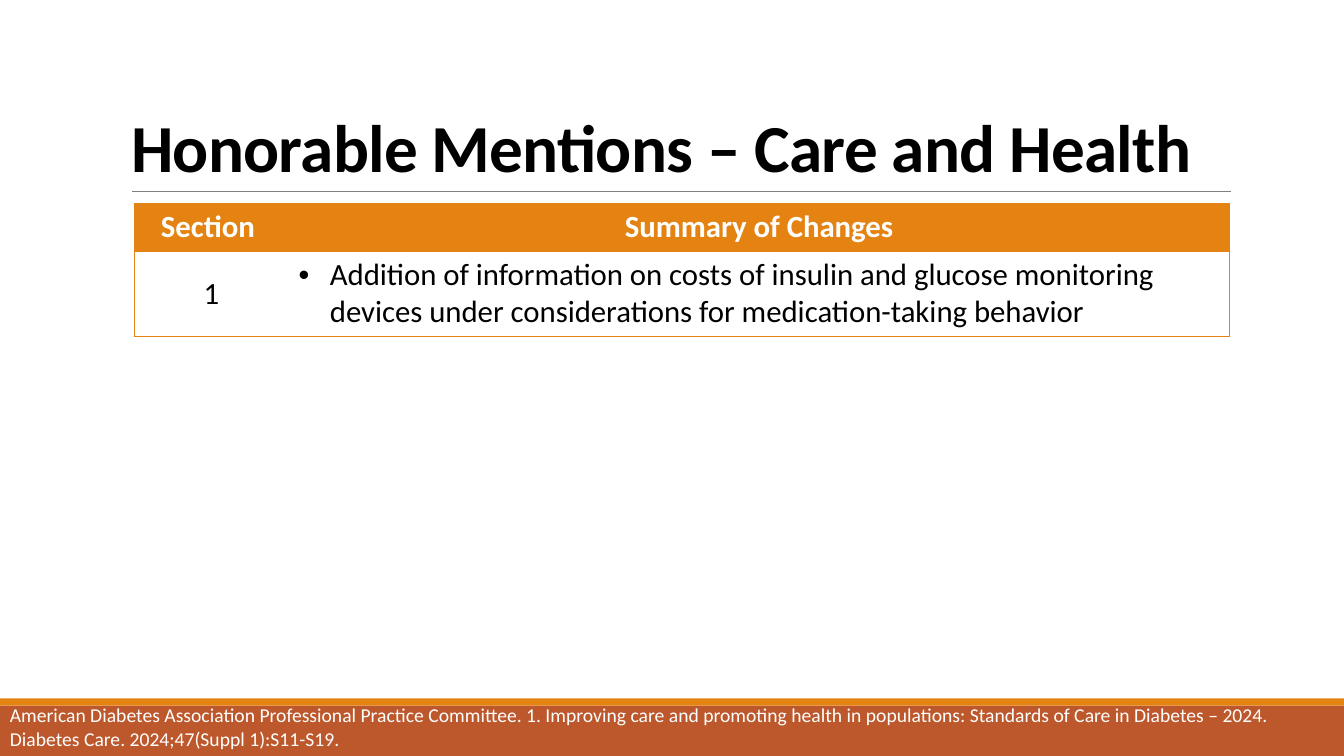
from lxml import etree
from pptx import Presentation
from pptx.dml.color import RGBColor
from pptx.enum.shapes import MSO_CONNECTOR, MSO_SHAPE
from pptx.enum.text import MSO_ANCHOR, PP_ALIGN
from pptx.oxml.ns import qn
from pptx.util import Cm, Pt

RECT = MSO_SHAPE.RECTANGLE
LINE = MSO_CONNECTOR.STRAIGHT
CENTER, LEFT = PP_ALIGN.CENTER, PP_ALIGN.LEFT
TOP, MIDDLE, BOTTOM = MSO_ANCHOR.TOP, MSO_ANCHOR.MIDDLE, MSO_ANCHOR.BOTTOM

WIDE, HIGH = 33.87, 19.05
ORANGE, RUST, GREY = "E48312", "BD582C", "808080"
BLACK, WHITE = "000000", "FFFFFF"


def rgb(code):
    return RGBColor.from_string(code)


class Page:
    font = "Calibri"

    def __init__(self, slide):
        self.slide = slide
        self.shapes = slide.shapes

    def style(self, par, size, color, bold=False):
        for run in par.runs:
            run.font.name = self.font
            run.font.size = Pt(size)
            run.font.bold = bold
            run.font.color.rgb = rgb(color)

    def title(self, text, x, y, w, h):
        box = self.shapes.title
        box.left, box.top, box.width, box.height = Cm(x), Cm(y), Cm(w), Cm(h)
        frame = box.text_frame
        frame.text = text
        frame.word_wrap = True
        frame.vertical_anchor = BOTTOM
        par = frame.paragraphs[0]
        par.alignment = LEFT
        par.line_spacing = 0.85
        self.style(par, 48, BLACK, True)
        par.runs[0].font._element.set("spc", "-50")

    def bar(self, y, h, color):
        bar = self.shapes.add_shape(RECT, 0, Cm(y), Cm(WIDE), Cm(h))
        bar.shadow.inherit = False
        bar.fill.solid()
        bar.fill.fore_color.rgb = rgb(color)
        bar.line.fill.background()

    def rule(self, x, y, w):
        line = self.shapes.add_connector(LINE, Cm(x), Cm(y), Cm(x + w), Cm(y))
        line.line.color.rgb = rgb(GREY)
        line.line.width = Pt(0.5)
        etree.SubElement(line._element.spPr, qn("a:effectLst"))

    def note(self, text, y, h):
        box = self.shapes.add_textbox(0, Cm(y), Cm(WIDE), Cm(h))
        frame = box.text_frame
        frame.word_wrap = True
        frame.text = text
        self.style(frame.paragraphs[0], 14, WHITE)

    def edge(self, cell, sides):
        """Draw the named sides of a cell in orange and clear the others."""
        props = cell._tc.get_or_add_tcPr()
        for side in "LRTB":
            line = etree.SubElement(props, qn("a:ln" + side), w=str(Pt(1)))
            if side in sides:
                fill = etree.SubElement(line, qn("a:solidFill"))
                etree.SubElement(fill, qn("a:srgbClr"), val=ORANGE)
            else:
                etree.SubElement(line, qn("a:noFill"))

    def bullet(self, par):
        props = par._p.get_or_add_pPr()
        props.set("marL", str(Cm(0.79)))
        props.set("indent", str(-Cm(0.79)))
        etree.SubElement(props, qn("a:buFont"), typeface="Arial")
        etree.SubElement(props, qn("a:buChar"), char="•")

    def table(self, rows, x, y, widths, heights):
        frame = self.shapes.add_table(len(rows), len(widths), Cm(x), Cm(y),
                                      Cm(sum(widths)), Cm(sum(heights)))
        grid = frame.table
        grid.horz_banding = False
        for col, width in zip(grid.columns, widths):
            col.width = Cm(width)
        for r, (row, height) in enumerate(zip(rows, heights)):
            grid.rows[r].height = Cm(height)
            head = r == 0
            for c, text in enumerate(row):
                cell = grid.cell(r, c)
                cell.text = text
                self.edge(cell, "TB" + "LR"[c])
                if head:
                    cell.fill.solid()
                    cell.fill.fore_color.rgb = rgb(ORANGE)
                else:
                    cell.fill.background()
                par = cell.text_frame.paragraphs[0]
                if head or c == 0:
                    par.alignment = CENTER
                else:
                    self.bullet(par)
                cell.vertical_anchor = TOP if head or c else MIDDLE
                self.style(par, 22, WHITE if head else BLACK, head)


def main():
    deck = Presentation()
    deck.slide_width, deck.slide_height = Cm(WIDE), Cm(HIGH)
    page = Page(deck.slides.add_slide(deck.slide_layouts[5]))
    page.bar(17.78, 1.27, RUST)
    page.bar(17.6, 0.18, ORANGE)
    page.rule(3.33, 4.83, 27.68)
    page.title("Honorable Mentions – Care and Health", 3.05, 0.79, 27.94, 4.04)
    page.table([
        ["Section ", "Summary of Changes"],
        ["1", "Addition of information on costs of insulin and glucose "
              "monitoring devices under considerations for "
              "medication-taking behavior"],
    ], 3.38, 5.13, [3.89, 23.72], [1.2, 2.15])
    page.note("American Diabetes Association Professional Practice Committee. "
              "1. Improving care and promoting health in populations: "
              "Standards of Care in Diabetes – 2024. "
              "Diabetes Care. 2024;47(Suppl 1):S11-S19.", 17.6, 1.45)
    deck.save("out.pptx")


if __name__ == "__main__":
    main()
